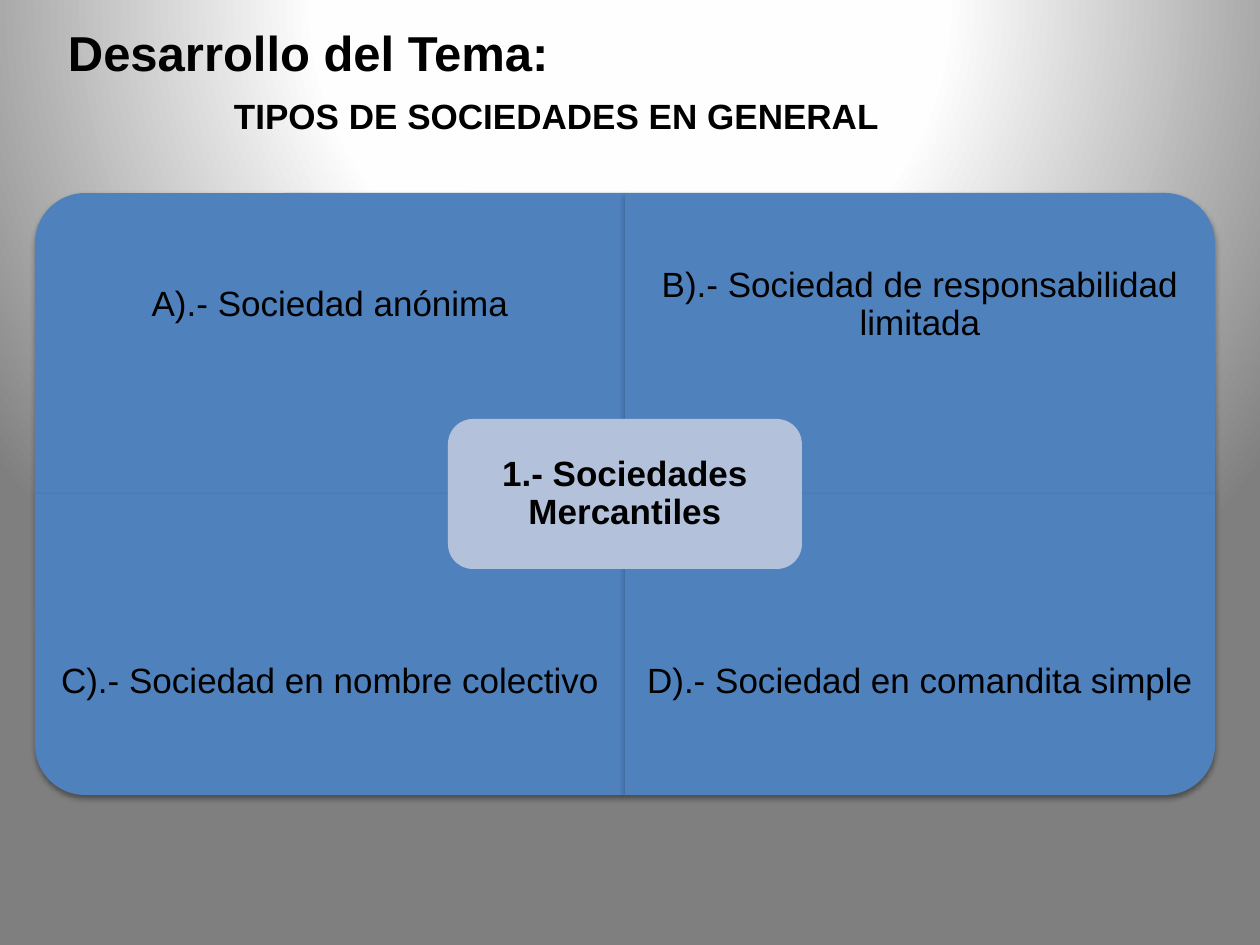
from dataclasses import dataclass

from pptx import Presentation
from pptx.dml.color import RGBColor
from pptx.enum.shapes import MSO_SHAPE
from pptx.enum.text import MSO_ANCHOR, PP_ALIGN
from pptx.oxml import parse_xml
from pptx.oxml.ns import nsdecls
from pptx.util import Pt

PX = 914400 / 126  # EMU per pixel
FONT = "Arial"
BLACK, TILE_BLUE, CENTRE_BLUE = "000000", "4F81BD", "B3C1DB"
ROUND_ONE, ROUND_ALL = MSO_SHAPE.ROUND_1_RECTANGLE, MSO_SHAPE.ROUNDED_RECTANGLE
TOP, MIDDLE = MSO_ANCHOR.TOP, MSO_ANCHOR.MIDDLE
LEFT, CENTER = PP_ALIGN.LEFT, PP_ALIGN.CENTER
TITLE_ONLY = 5

# Matrix geometry
MATRIX_X, MATRIX_Y = 35, 193
TILE_W, TILE_H = 590, 301
LABEL_H = 225
CENTRE_W, CENTRE_H = 354, 150

BACKGROUND = f"""<p:bg {nsdecls('p', 'a')}><p:bgPr><a:gradFill rotWithShape="1"><a:gsLst>
<a:gs pos="0"><a:srgbClr val="FFFFFF"/></a:gs>
<a:gs pos="40000"><a:srgbClr val="FEFEFE"/></a:gs>
<a:gs pos="100000"><a:srgbClr val="7F7F7F"/></a:gs></a:gsLst>
<a:path path="circle"><a:fillToRect l="50000" t="-80000" r="50000" b="180000"/></a:path>
</a:gradFill><a:effectLst/></p:bgPr></p:bg>"""

TILE_SHADOW = f"""<a:effectLst {nsdecls('a')}>
<a:outerShdw blurRad="40000" dist="20000" dir="5400000" rotWithShape="0">
<a:srgbClr val="000000"><a:alpha val="38000"/></a:srgbClr></a:outerShdw></a:effectLst>"""


@dataclass
class Tile:
    text: str
    row: int
    column: int
    rotation: int  # turns the rounded corner outwards


TILES = [
    Tile("A).- Sociedad anónima", 0, 0, 270),
    Tile("B).- Sociedad de responsabilidad limitada", 0, 1, 0),
    Tile("C).- Sociedad en nombre colectivo", 1, 0, 180),
    Tile("D).- Sociedad en comandita simple", 1, 1, 90),
]


def px(*lengths: float) -> list[int]:
    return [round(length * PX) for length in lengths]


def color(hex_value: str) -> RGBColor:
    return RGBColor.from_string(hex_value)


def write(shape, text: str, size: int = 20, bold: bool = False, align=CENTER,
          anchor=MIDDLE, inset: tuple[int, int] = (20, 20), spacing: float = 0.9) -> None:
    frame = shape.text_frame
    frame.text = text
    frame.word_wrap = True
    frame.vertical_anchor = anchor
    inset_x, inset_y = px(*inset)
    frame.margin_left = frame.margin_right = inset_x
    frame.margin_top = frame.margin_bottom = inset_y
    paragraph = frame.paragraphs[0]
    paragraph.alignment = align
    paragraph.line_spacing = spacing
    font = paragraph.runs[0].font
    font.name, font.size, font.bold = FONT, Pt(size), bold
    font.color.rgb = color(BLACK)


def add_panel(slide, preset, x: float, y: float, w: int, h: int, fill: str):
    panel = slide.shapes.add_shape(preset, *px(x, y, w, h))
    panel.shadow.inherit = False
    panel.fill.solid()
    panel.fill.fore_color.rgb = color(fill)
    panel.line.fill.background()
    return panel


def add_tile(slide, tile: Tile) -> None:
    x = MATRIX_X + tile.column * TILE_W
    y = MATRIX_Y + tile.row * TILE_H
    # A quarter turn swaps the sides about the same centre
    w, h = (TILE_H, TILE_W) if tile.rotation % 180 else (TILE_W, TILE_H)
    panel = add_panel(slide, ROUND_ONE, x + (TILE_W - w) / 2, y + (TILE_H - h) / 2,
                      w, h, TILE_BLUE)
    panel.rotation = tile.rotation
    properties = panel._element.spPr
    properties.replace(properties.find("{*}effectLst"), parse_xml(TILE_SHADOW))

    # Upright label, against the outer edge of its row
    label_y = y + tile.row * (TILE_H - LABEL_H)
    write(slide.shapes.add_textbox(*px(x, label_y, TILE_W, LABEL_H)), tile.text)


def main() -> None:
    prs = Presentation()
    prs.slide_width, prs.slide_height = px(1260, 945)
    slide = prs.slides.add_slide(prs.slide_layouts[TITLE_ONLY])
    slide.element.cSld.insert(0, parse_xml(BACKGROUND))

    # Headings
    section = slide.shapes.add_textbox(*px(55, 16, 1160, 72))
    write(section, "Desarrollo del Tema:", 28, True, LEFT, TOP, (13, 6), 1)
    title = slide.shapes.title
    title.left, title.top, title.width, title.height = px(221, 88, 829, 105)
    write(title, "TIPOS DE SOCIEDADES EN GENERAL", 20, True, LEFT, TOP, (13, 6), 1)

    # Four tiles around the central topic
    for tile in TILES:
        add_tile(slide, tile)
    centre = add_panel(slide, ROUND_ALL, MATRIX_X + TILE_W - CENTRE_W / 2,
                       MATRIX_Y + TILE_H - CENTRE_H / 2, CENTRE_W, CENTRE_H, CENTRE_BLUE)
    write(centre, "1.- Sociedades Mercantiles", bold=True, inset=(17, 17))

    prs.save("out.pptx")


if __name__ == "__main__":
    main()
